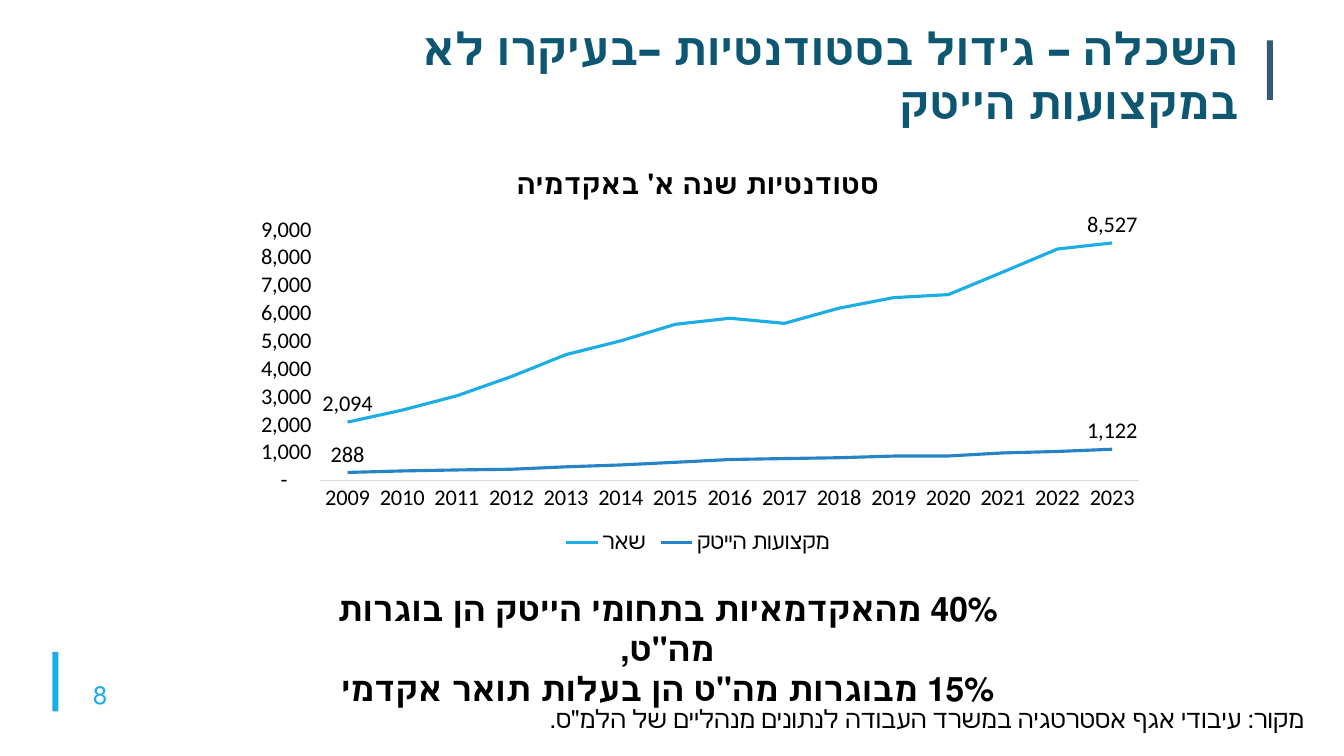
from dataclasses import dataclass

from pptx import Presentation
from pptx.chart.data import CategoryChartData
from pptx.dml.color import RGBColor
from pptx.enum.chart import XL_CHART_TYPE as ChartType
from pptx.enum.chart import XL_LABEL_POSITION as LabelPos
from pptx.enum.chart import XL_LEGEND_POSITION as LegendPos
from pptx.enum.chart import XL_TICK_MARK as TickMark
from pptx.enum.dml import MSO_LINE_DASH_STYLE as Dash
from pptx.enum.shapes import MSO_SHAPE as Shape
from pptx.enum.text import MSO_AUTO_SIZE as AutoSize
from pptx.enum.text import PP_ALIGN as Align
from pptx.util import Cm, Pt

COLORS = {
    "sky": "1CADE4",
    "blue": "2683C6",
    "slate": "335B74",
    "title": "0E5772",
    "black": "000000",
    "axis": "D9D9D9",
}


def rgb(name: str) -> RGBColor:
    return RGBColor.from_string(COLORS[name])


@dataclass
class Box:
    left: float
    top: float
    width: float
    height: float

    def cm(self) -> tuple:
        return Cm(self.left), Cm(self.top), Cm(self.width), Cm(self.height)


@dataclass
class Bar:
    box: Box
    color: str


@dataclass
class Label:
    box: Box
    lines: list[str]
    size: int
    font: str
    color: str = "black"
    bold: bool = False
    align: Align = Align.RIGHT


@dataclass
class Line:
    name: str
    color: str
    values: list[int]


BARS = [
    Bar(Box(1.32, 16.43, 0.15, 1.5), "sky"),
    Bar(Box(31.93, 1.02, 0.15, 1.5), "slate"),
]

LABELS = [
    Label(Box(7.59, 0.41, 23.88, 3), ["השכלה – גידול בסטודנטיות –בעיקרו לא במקצועות הייטק"],
          32, "Lato", "title", bold=True),
    Label(Box(0, 16.99, 2.95, 1.02), ["8"], 18, "Calibri", "sky"),
    Label(Box(10.72, 17.6, 22.4, 1.02),
          ["מקור: עיבודי אגף אסטרטגיה במשרד העבודה לנתונים מנהליים של הלמ\"ס."], 18, "Lato"),
    Label(Box(7.59, 14.68, 18.47, 2.31),
          ["40% מהאקדמאיות בתחומי הייטק הן בוגרות מה\"ט,",
           "15% מבוגרות מה\"ט הן בעלות תואר אקדמי"],
          24, "Calibri", bold=True, align=Align.CENTER),
]

CHART_BOX = Box(5.99, 3.76, 23.19, 10.31)
CHART_TITLE = "סטודנטיות שנה א' באקדמיה"
YEARS = [str(year) for year in range(2009, 2024)]
LINES = [
    Line("שאר", "sky", [2094, 2524, 3038, 3729, 4519, 5012, 5607, 5824,
                        5641, 6186, 6564, 6672, 7482, 8310, 8527]),
    Line("מקצועות הייטק", "blue", [288, 343, 378, 404, 491, 557, 653, 753,
                                   787, 817, 877, 879, 989, 1042, 1122]),
]


def style_font(font, size: int, name: str, color: str = "black", bold: bool = False) -> None:
    font.size = Pt(size)
    font.name = name
    font.bold = bold
    font.color.rgb = rgb(color)


def set_rtl(p) -> None:
    p._p.get_or_add_pPr().set("rtl", "1")


def draw_bar(s, bar: Bar) -> None:
    sp = s.shapes.add_shape(Shape.RECTANGLE, *bar.box.cm())
    sp.shadow.inherit = False
    sp.fill.solid()
    sp.fill.fore_color.rgb = rgb(bar.color)
    sp.line.fill.background()


def draw_label(s, label: Label) -> None:
    tf = s.shapes.add_textbox(*label.box.cm()).text_frame
    tf.word_wrap = True
    tf.auto_size = AutoSize.SHAPE_TO_FIT_TEXT
    for i, text in enumerate(label.lines):
        p = tf.add_paragraph() if i else tf.paragraphs[0]
        p.alignment = label.align
        set_rtl(p)
        r = p.add_run()
        r.text = text
        style_font(r.font, label.size, label.font, label.color, label.bold)


def draw_chart(s) -> None:
    data = CategoryChartData(number_format="#,##0")
    data.categories = YEARS
    for line in LINES:
        data.add_series(line.name, line.values)
    chart = s.shapes.add_chart(ChartType.LINE, *CHART_BOX.cm(), data).chart
    style_font(chart.font, 16, "Calibri")

    # Title and legend
    chart.has_title = True
    p = chart.chart_title.text_frame.paragraphs[0]
    set_rtl(p)
    r = p.add_run()
    r.text = CHART_TITLE
    style_font(r.font, 20, "Calibri", bold=True)
    chart.chart_title.include_in_layout = False
    chart.has_legend = True
    chart.legend.position = LegendPos.BOTTOM
    chart.legend.include_in_layout = False

    # Axes
    years, counts = chart.category_axis, chart.value_axis
    for axis in (years, counts):
        axis.major_tick_mark = axis.minor_tick_mark = TickMark.NONE
        axis.has_major_gridlines = False
    years.format.line.color.rgb = rgb("axis")
    years.format.line.width = Pt(0.75)
    counts.format.line.fill.background()
    counts.minimum_scale, counts.maximum_scale, counts.major_unit = 0, 9000, 1000
    counts.tick_labels.number_format = r'_(* #,##0_);_(* \(#,##0\);_(* "-"??_);_('
    counts.tick_labels.number_format_is_linked = False

    # Lines, labelled at both ends
    chart.plots[0].vary_by_categories = False
    for series, line in zip(chart.plots[0].series, LINES):
        series.smooth = False
        series.format.line.color.rgb = rgb(line.color)
        series.format.line.width = Pt(2.25)
        series.format.line.dash_style = Dash.SOLID
        series.data_labels.show_value = False
        for end in (0, len(YEARS) - 1):
            series.points[end].data_label.position = LabelPos.ABOVE


def main() -> None:
    prs = Presentation()
    prs.slide_width, prs.slide_height = Cm(33.87), Cm(19.05)
    s = prs.slides.add_slide(prs.slide_layouts[6])
    for bar in BARS:
        draw_bar(s, bar)
    draw_chart(s)
    for label in LABELS:
        draw_label(s, label)
    prs.save("out.pptx")


if __name__ == "__main__":
    main()
